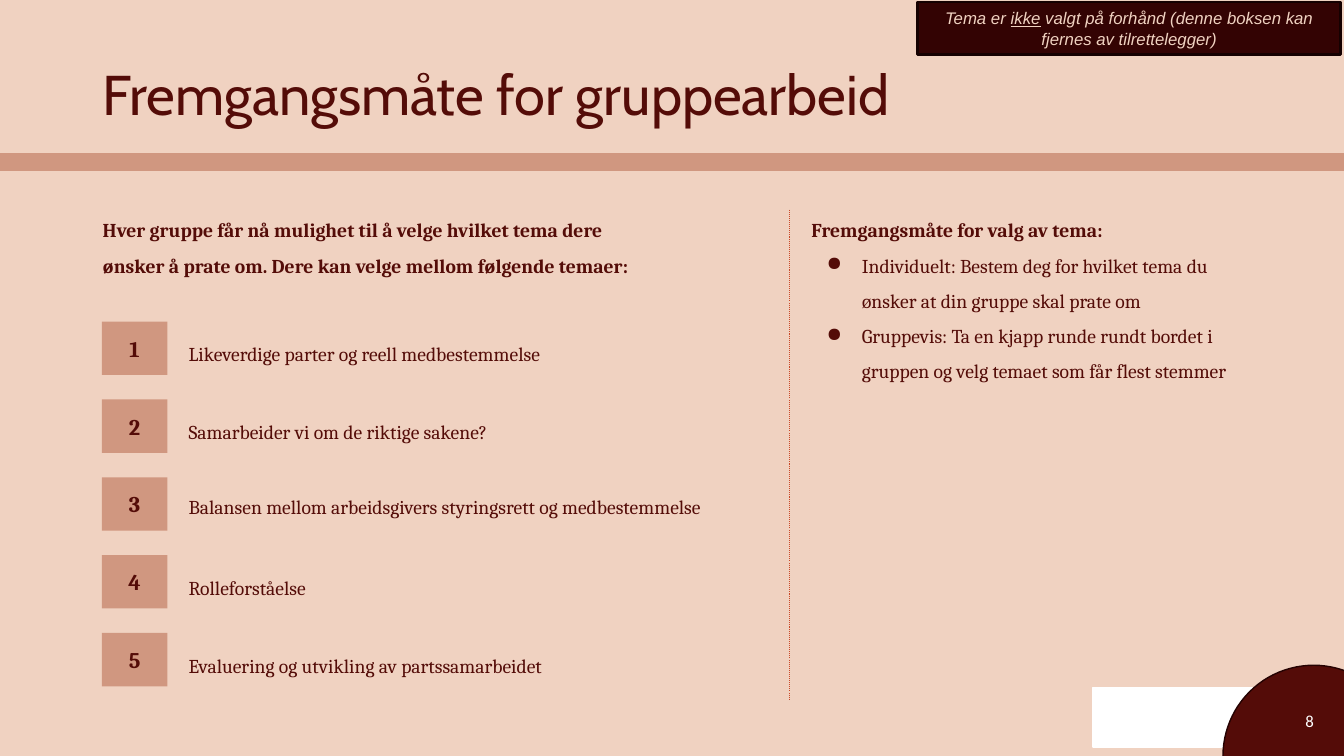
from lxml.etree import SubElement
from pptx import Presentation
from pptx.dml.color import RGBColor
from pptx.enum.dml import MSO_LINE
from pptx.enum.shapes import MSO_CONNECTOR, MSO_SHAPE
from pptx.enum.text import MSO_ANCHOR, PP_ALIGN
from pptx.oxml.ns import qn
from pptx.util import Inches, Pt

PALE, ROSE, WINE = "F0D2C1", "D09780", "540C08"
MID, TOP = MSO_ANCHOR.MIDDLE, MSO_ANCHOR.TOP


def color(code):
    return RGBColor.from_string(code)


class Slide:
    base = {"name": "Cambria", "size": Pt(14), "bold": False}

    def __init__(self, deck):
        self.page = deck.slides.add_slide(deck.slide_layouts[6])
        self.page.background.fill.solid()
        self.page.background.fill.fore_color.rgb = color(PALE)

    def shape(self, box, fill, line=None, width=1, kind=MSO_SHAPE.RECTANGLE):
        item = self.page.shapes.add_shape(kind, *map(Inches, box))
        item.shadow.inherit = False
        item.fill.solid()
        item.fill.fore_color.rgb = color(fill)
        if line:
            item.line.color.rgb = color(line)
            item.line.width = Pt(width)
        else:
            item.line.fill.background()
        return item

    def frame(self, item, anchor=MID, left=0.1, edge=0.05):
        style = {"word_wrap": True, "vertical_anchor": anchor,
                 "margin_left": Inches(left), "margin_right": Inches(0.1),
                 "margin_top": Inches(edge), "margin_bottom": Inches(edge)}
        for key, value in style.items():
            setattr(item.text_frame, key, value)
        return item.text_frame

    def label(self, box, anchor=MID):
        return self.frame(self.page.shapes.add_textbox(*map(Inches, box)), anchor)

    def text(self, para, words, align=PP_ALIGN.LEFT, space=1.0, tint=WINE, **font):
        para.alignment = align
        para.line_spacing = space
        run = para.add_run()
        run.text = words
        for key, value in {**self.base, **font}.items():
            setattr(run.font, key, value)
        run.font.color.rgb = color(tint)

    def bullet(self, para, words, **style):
        props = para._p.get_or_add_pPr()
        props.set("marL", str(Inches(0.5)))
        props.set("indent", str(Inches(-0.35)))
        tone = SubElement(props, qn("a:buClr"))
        SubElement(tone, qn("a:srgbClr"), val=WINE)
        SubElement(props, qn("a:buChar"), char="●")
        self.text(para, words, **style)

    def rule(self, x, start, end, tint):
        line = self.page.shapes.add_connector(
            MSO_CONNECTOR.STRAIGHT, *map(Inches, (x, start, x, end)))
        line.line.color.rgb = color(tint)
        line.line.width = Pt(0.75)
        line.line.dash_style = MSO_LINE.ROUND_DOT
        SubElement(line._element.spPr, qn("a:effectLst"))


def main():
    deck = Presentation()
    deck.slide_width, deck.slide_height = Inches(13.33), Inches(7.5)
    slide = Slide(deck)

    # Bands, corner and page number
    slide.shape((10.84, 6.82, 1.58, 0.59), "FFFFFF", "FFFFFF")
    slide.shape((0, 0, 13.33, 1.53), PALE, PALE)
    slide.shape((0, 1.53, 13.33, 0.16), ROSE, ROSE)
    slide.shape((12.13, 6.6, 1.8, 1.8), WINE, "250202", kind=MSO_SHAPE.OVAL)
    number = slide.label((11.9, 6.95, 1.23, 0.4))
    slide.text(number.paragraphs[0], "8", PP_ALIGN.RIGHT,
               tint="FFFFFF", name="Calibri", size=Pt(12))

    # Note for the organiser
    note = slide.frame(slide.shape((9.1, 0.02, 4.2, 0.52), "330303", "150101", 2))
    for words, under in (
            ("Tema er ", False), ("ikke", True),
            (" valgt på forhånd (denne boksen kan fjernes av tilrettelegger)", False)):
        slide.text(note.paragraphs[0], words, PP_ALIGN.CENTER, tint=PALE,
                   name="Arial", size=Pt(12), italic=True, underline=under)

    # Title and lead text
    title = slide.label((0.92, 0.4, 12.41, 1.13))
    slide.text(title.paragraphs[0], "Fremgangsmåte for gruppearbeid",
               space=0.9, name="Cabin", size=Pt(40))
    lead = slide.label((0.92, 2, 5.67, 0.96), TOP)
    slide.text(lead.paragraphs[0],
               "Hver gruppe får nå mulighet til å velge hvilket tema dere ønsker "
               "å prate om. Dere kan velge mellom følgende temaer:",
               space=1.5, bold=True)

    # Numbered topics
    topics = (("Likeverdige parter og reell medbestemmelse", 1.5),
              ("Samarbeider vi om de riktige sakene?", 1.5),
              ("Balansen mellom arbeidsgivers styringsrett og medbestemmelse", 1.25),
              ("Rolleforståelse", 1.5),
              ("Evaluering og utvikling av partssamarbeidet", 1.5))
    step = (6.28 - 3.19) / (len(topics) - 1)
    for index, (topic, space) in enumerate(topics):
        top = 3.19 + index * step
        tile = slide.frame(slide.shape((1.01, top, 0.65, 0.53), ROSE), edge=0.1)
        slide.text(tile.paragraphs[0], str(index + 1), PP_ALIGN.CENTER,
                   size=Pt(16), bold=True)
        bar = slide.shape((1.67, top, 5.89, 0.53), PALE,
                          kind=MSO_SHAPE.ROUNDED_RECTANGLE)
        bar.adjustments[0] = 0
        slide.text(slide.frame(bar, left=0.2, edge=0.1).paragraphs[0],
                   topic, space=space)

    # Divider and steps
    slide.rule(7.83, 2.08, 6.95, "CA4928")
    steps = slide.label((7.95, 2, 4.46, 4.76), TOP)
    slide.text(steps.paragraphs[0], "Fremgangsmåte for valg av tema:",
               space=1.5, bold=True)
    for words in (
            "Individuelt: Bestem deg for hvilket tema du ønsker at din gruppe "
            "skal prate om",
            "Gruppevis: Ta en kjapp runde rundt bordet i gruppen og velg temaet "
            "som får flest stemmer"):
        slide.bullet(steps.add_paragraph(), words, space=1.5)

    deck.save("out.pptx")


if __name__ == "__main__":
    main()
